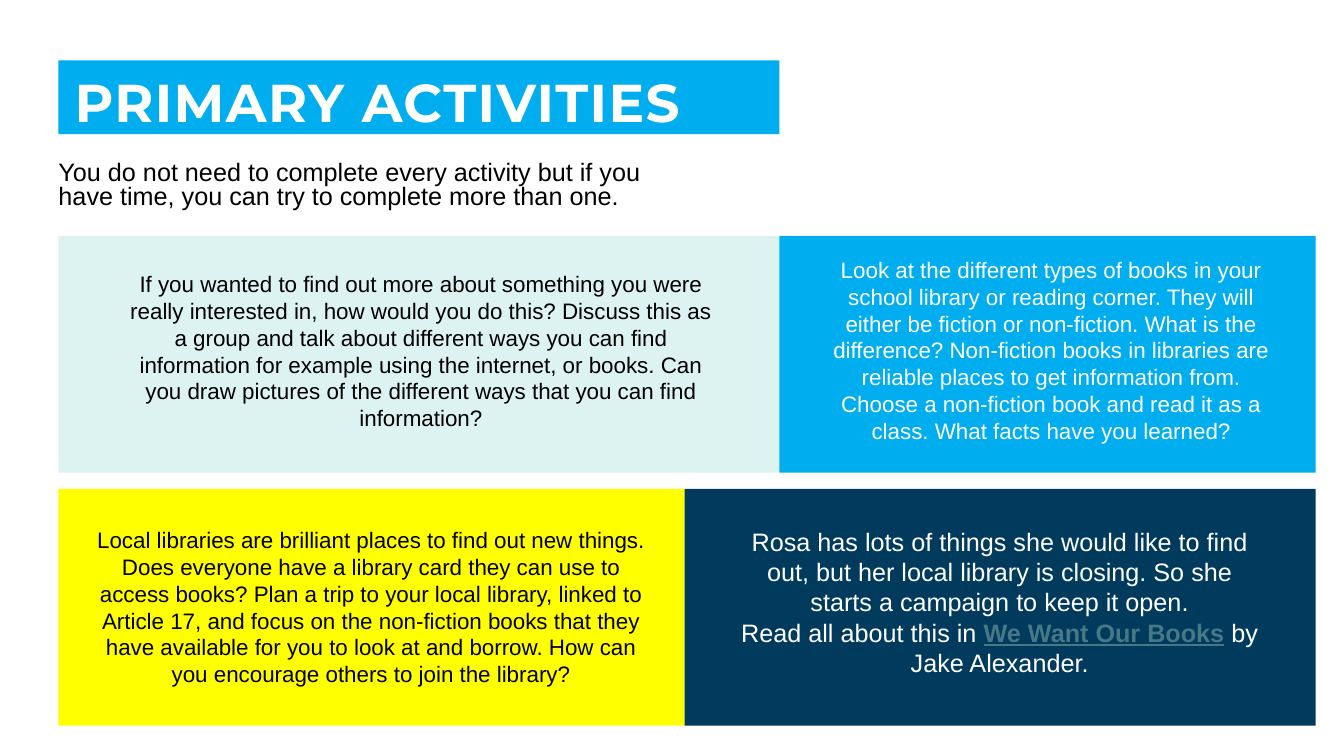
from pptx import Presentation
from pptx.dml.color import RGBColor
from pptx.enum.shapes import MSO_SHAPE
from pptx.enum.text import MSO_ANCHOR, PP_ALIGN
from pptx.util import Pt

PX = 9144  # 100 px to the inch
BLACK = RGBColor(0x00, 0x00, 0x00)
WHITE = RGBColor(0xFF, 0xFF, 0xFF)
BLUE = RGBColor(0x00, 0xAE, 0xEF)
MINT = RGBColor(0xDD, 0xF3, 0xF1)
YELLOW = RGBColor(0xFF, 0xFF, 0x00)
NAVY = RGBColor(0x00, 0x3B, 0x5E)
TEAL = RGBColor(0x46, 0x78, 0x86)

LEFT, SPLIT, RIGHT = 58, 773, 1305
LOW_SPLIT = 679
ROW_1, ROW_2, ROW_H = 234, 485, 235


def write(para, text, size=16, color=BLACK, font="Arial", bold=False, line=False):
    """Add one formatted run to a paragraph."""
    run = para.add_run()
    run.text = text
    run.font.size = Pt(size)
    run.font.name = font
    run.font.bold = bold
    run.font.underline = line
    run.font.color.rgb = color
    return run


def add_text(box, align=PP_ALIGN.CENTER):
    """Add a wrapping text box and return its frame."""
    frame = slide.shapes.add_textbox(*[n * PX for n in box]).text_frame
    frame.word_wrap = True
    frame.paragraphs[0].alignment = align
    return frame


deck = Presentation()
deck.slide_width, deck.slide_height = 1333 * PX, 750 * PX
slide = deck.slides.add_slide(deck.slide_layouts[5])

# Title bar
title = slide.shapes.title
title.left, title.top = LEFT * PX, 60 * PX
title.width, title.height = (SPLIT - LEFT) * PX, 73 * PX
title.fill.solid()
title.fill.fore_color.rgb = BLUE
frame = title.text_frame
frame.vertical_anchor = MSO_ANCHOR.MIDDLE
frame.margin_left = frame.margin_top = 16 * PX
frame.margin_right, frame.margin_bottom = 12 * PX, 0
para = frame.paragraphs[0]
para.alignment = PP_ALIGN.LEFT
para.line_spacing = 0.9
run = write(para, "PRIMARY ACTIVITIES", 38, WHITE, "Montserrat", bold=True)
run.font._element.set("spc", "100")

# Introduction
frame = add_text((LEFT, 156, 621, 62), PP_ALIGN.LEFT)
frame.margin_left = 0
frame.paragraphs[0].line_spacing = 0.8
write(frame.paragraphs[0], "You do not need to complete every activity but if you "
      "have time, you can try to complete more than one.", 18)

# Coloured panels
for left, right, top, color in (
    (LEFT, SPLIT, ROW_1, MINT),
    (LEFT, LOW_SPLIT, ROW_2, YELLOW),
    (SPLIT, RIGHT, ROW_1, BLUE),
    (LOW_SPLIT, RIGHT, ROW_2, NAVY),
):
    panel = slide.shapes.add_shape(
        MSO_SHAPE.RECTANGLE, left * PX, top * PX, (right - left) * PX, ROW_H * PX)
    panel.shadow.inherit = False
    panel.fill.solid()
    panel.fill.fore_color.rgb = color
    panel.line.fill.background()

# Activities
for box, color, text in (
    ((810, 249, 465, 199), WHITE,
     "Look at the different types of books in your school library or reading "
     "corner. They will either be fiction or non-fiction. What is the difference? "
     "Non-fiction books in libraries are reliable places to get information from. "
     "Choose a non-fiction book and read it as a class. What facts have you learned?"),
    ((114, 263, 607, 172), BLACK,
     "If you wanted to find out more about something you were really interested in, "
     "how would you do this? Discuss this as a group and talk about different ways "
     "you can find information for example using the internet, or books. Can you "
     "draw pictures of the different ways that you can find information?"),
    ((84, 517, 568, 172), BLACK,
     "Local libraries are brilliant places to find out new things. Does everyone "
     "have a library card they can use to access books? Plan a trip to your local "
     "library, linked to Article 17, and focus on the non-fiction books that they "
     "have available for you to look at and borrow. How can you encourage others to "
     "join the library?"),
):
    write(add_text(box).paragraphs[0], text, color=color)

# Story
frame = add_text((720, 517, 543, 188))
write(frame.paragraphs[0], "Rosa has lots of things she would like to find out, but her "
      "local library is closing. So she starts a campaign to keep it open.", 18, WHITE)
para = frame.add_paragraph()
para.alignment = PP_ALIGN.CENTER
write(para, "Read all about this in ", 18, WHITE)
write(para, "We Want Our Books", 18, TEAL, bold=True, line=True)
write(para, " by Jake Alexander.", 18, WHITE)

deck.save("out.pptx")
